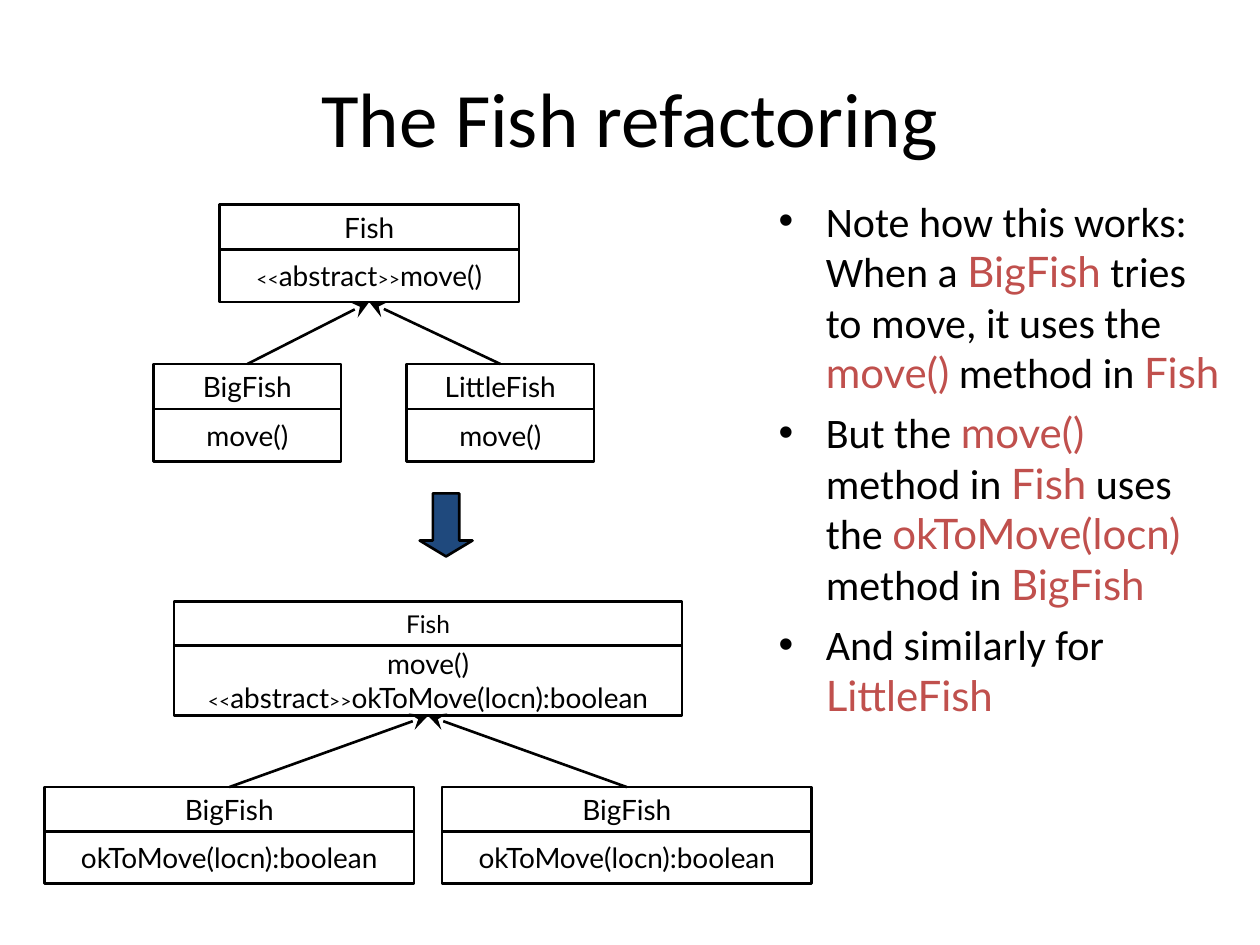
from dataclasses import dataclass

from lxml.etree import SubElement
from pptx import Presentation
from pptx.dml.color import RGBColor
from pptx.enum.shapes import MSO_CONNECTOR, MSO_SHAPE
from pptx.enum.text import MSO_ANCHOR, PP_ALIGN
from pptx.oxml.ns import qn
from pptx.util import Pt


@dataclass(frozen=True)
class Theme:
    ink: RGBColor = RGBColor(0, 0, 0)
    accent: RGBColor = RGBColor(0xC0, 0x50, 0x4D)
    arrow: RGBColor = RGBColor(0x1F, 0x49, 0x7D)
    text_font: str = "Calibri"
    code_font: str = "Lato"
    title_size: float = 44
    body_size: float = 24
    member_size: float = 16
    small_size: float = 14
    stereotype_size: float = 11
    stroke: float = 1.5


class Diagram:
    def __init__(self, page, theme):
        self.page = page
        self.theme = theme

    def style(self, font, size, color):
        return {"name": font, "size": Pt(size), "color": color}

    def spans(self, para, text, plain, marked):
        for index, part in enumerate(text.split("|")):
            if not part:
                continue
            span = para.add_run()
            span.text = part
            for key, value in (marked if index % 2 else plain).items():
                if key == "color":
                    span.font.color.rgb = value
                else:
                    setattr(span.font, key, value)

    def fill_text(self, frame, lines, plain, marked, frame_format, para_format):
        for key, value in frame_format.items():
            setattr(frame, key, value)
        for index, line in enumerate(lines):
            para = frame.add_paragraph() if index else frame.paragraphs[0]
            for key, value in para_format.items():
                setattr(para, key, value)
            self.spans(para, line, plain, marked)

    def title(self, text, *area):
        theme = self.theme
        box = self.page.shapes.add_textbox(*map(Pt, area))
        plain = self.style(theme.text_font, theme.title_size, theme.ink)
        self.fill_text(box.text_frame, [text], plain, plain,
                       {"word_wrap": True, "vertical_anchor": MSO_ANCHOR.MIDDLE},
                       {"alignment": PP_ALIGN.CENTER})

    def bullets(self, lines, *area):
        theme = self.theme
        box = self.page.shapes.add_textbox(*map(Pt, area))
        self.fill_text(box.text_frame, lines,
                       self.style(theme.text_font, theme.body_size, theme.ink),
                       self.style(theme.code_font, theme.body_size, theme.accent),
                       {"word_wrap": True}, {"space_before": Pt(5.8)})
        for para in box.text_frame.paragraphs:
            properties = para._p.get_or_add_pPr()
            properties.set("marL", str(Pt(27)))
            properties.set("indent", str(Pt(-27)))
            SubElement(properties, qn("a:buFont"), typeface="Arial")
            SubElement(properties, qn("a:buChar"), char="•")

    def shape(self, kind, area, fill=None):
        shape = self.page.shapes.add_shape(kind, *map(Pt, area))
        shape.shadow.inherit = False
        if fill is None:
            shape.fill.background()
        else:
            shape.fill.solid()
            shape.fill.fore_color.rgb = fill
        shape.line.color.rgb = self.theme.ink
        shape.line.width = Pt(self.theme.stroke)
        return shape

    def compartment(self, lines, size, *area):
        theme = self.theme
        box = self.shape(MSO_SHAPE.RECTANGLE, area)
        self.fill_text(box.text_frame, lines,
                       self.style(theme.code_font, size, theme.ink),
                       self.style(theme.code_font, theme.stereotype_size, theme.ink),
                       {"word_wrap": False, "vertical_anchor": MSO_ANCHOR.MIDDLE},
                       {"alignment": PP_ALIGN.CENTER})
        return box

    def class_box(self, name, members, left, top, width, heights, name_size=None):
        head, body = heights
        size = self.theme.member_size
        return (self.compartment([name], name_size or size, left, top, width, head),
                self.compartment(members, size, left, top + head, width, body))

    def inherit(self, child, parent):
        line = self.page.shapes.add_connector(MSO_CONNECTOR.STRAIGHT, 0, 0, 0, 0)
        line.begin_connect(child[0], 0)
        line.end_connect(parent[1], 2)
        line.line.color.rgb = self.theme.ink
        line.line.width = Pt(self.theme.stroke)
        properties = line._element.spPr
        SubElement(properties.find(qn("a:ln")), qn("a:tailEnd"),
                   type="stealth", w="lg", len="lg")
        SubElement(properties, qn("a:effectLst"))

    def down_arrow(self, *area):
        arrow = self.shape(MSO_SHAPE.DOWN_ARROW, area, self.theme.arrow)
        arrow.adjustments[0] = 0.5
        arrow.adjustments[1] = 0.3


def main():
    """Build the slide showing the Fish classes before and after refactoring."""
    deck = Presentation()
    deck.slide_width, deck.slide_height = Pt(720), Pt(540)
    page = deck.slides.add_slide(deck.slide_layouts[6])
    theme = Theme()
    diagram = Diagram(page, theme)

    diagram.title("The Fish refactoring", 36, 21.6, 648, 90)

    before = diagram.class_box("Fish", ["|<<|abstract|>>|move()"],
                               125.3, 116.8, 171.4, (25.8, 30))
    for name, left in (("BigFish", 87.8), ("LittleFish", 232.3)):
        child = diagram.class_box(name, ["move()"], left, 208, 107.2, (25.8, 30))
        diagram.inherit(child, before)

    diagram.down_arrow(239.8, 282, 30.2, 36)

    after = diagram.class_box(
        "Fish", ["move()", "|<<|abstract|>>|okToMove(locn):boolean"],
        99.4, 343.6, 290.4, (25.2, 40.2), theme.small_size)
    for left in (25.4, 252.6):
        child = diagram.class_box("BigFish", ["okToMove(locn):boolean"],
                                  left, 449.8, 211.2, (25.2, 29.8))
        diagram.inherit(child, after)

    diagram.bullets([
        "Note how this works: When a |BigFish| tries to move, it uses the "
        "|move()| method in |Fish|",
        "But the |move() |method in |Fish| uses the |okToMove(locn) |method in "
        "|BigFish|",
        "And similarly for |LittleFish|",
    ], 437.8, 108, 267.2, 414)

    deck.save("out.pptx")


if __name__ == "__main__":
    main()
